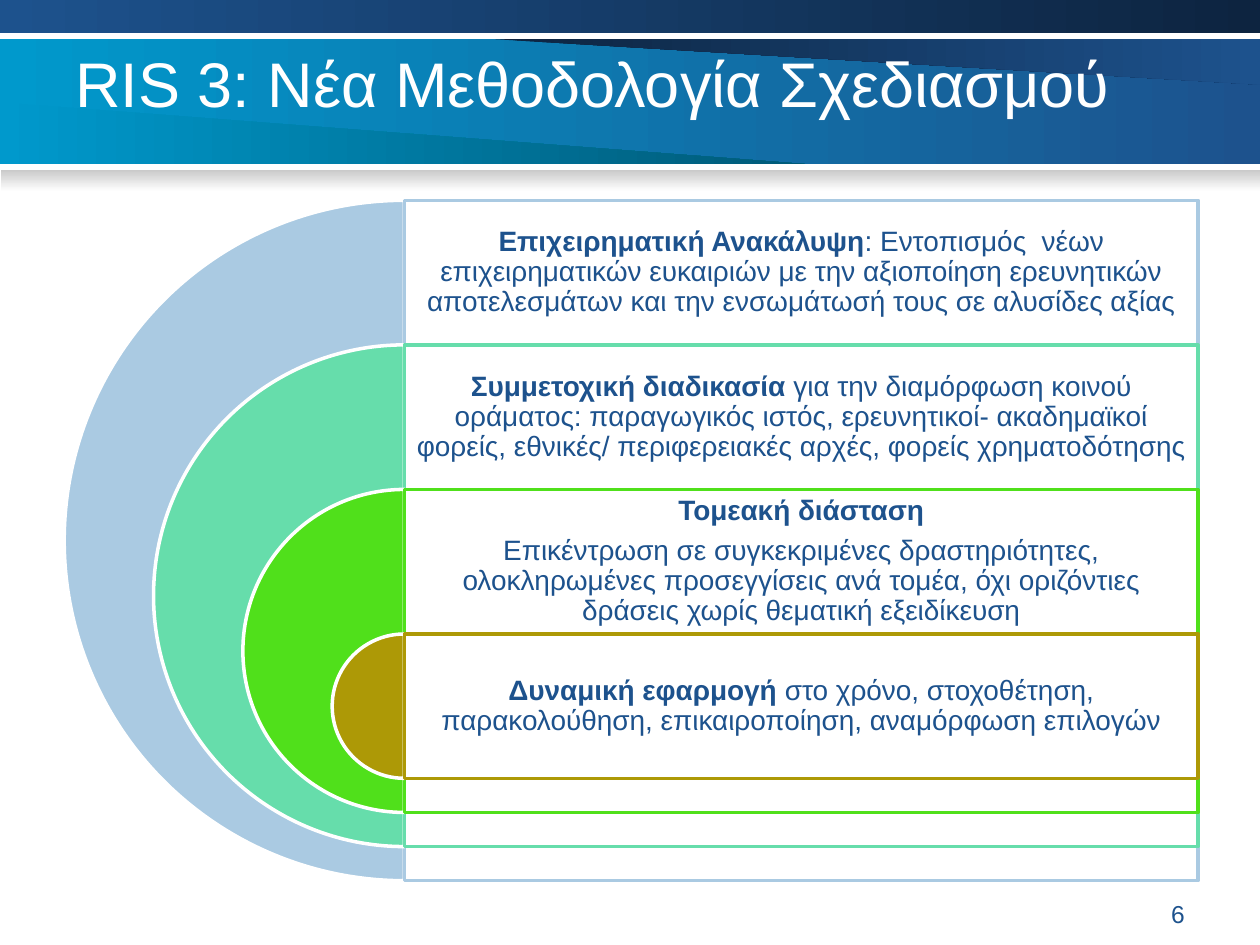
from dataclasses import dataclass

from lxml import etree
from pptx import Presentation
from pptx.dml import color
from pptx.enum import shapes, text
from pptx.oxml import ns
from pptx.util import Pt


@dataclass(frozen=True)
class Theme:
    """Colours, font and type sizes of the slide."""
    font: str = "Arial"
    title: float = 36
    body: float = 16
    number: float = 14
    white: str = "FFFFFF"
    blue: str = "1D528D"
    navy: str = "0D2440"
    cyan: str = "0099CC"
    teal: str = "005A78"
    grey: str = "CACACA"
    rings: tuple = ("AACAE2", "66DDAB", "50E01B", "AD9906")


T = Theme()
CENTER, RIGHT = text.PP_ALIGN.CENTER, text.PP_ALIGN.RIGHT
LAYERS = [
    [[("Επιχειρηματική Ανακάλυψη", True),
      (": Εντοπισμός  νέων επιχειρηματικών ευκαιριών με την αξιοποίηση ερευνητικών "
       "αποτελεσμάτων και την ενσωμάτωσή τους σε αλυσίδες αξίας", False)]],
    [[("Συμμετοχική διαδικασία ", True),
      ("για την διαμόρφωση κοινού οράματος: παραγωγικός ιστός, ερευνητικοί- ακαδημαϊκοί "
       "φορείς, εθνικές/ περιφερειακές αρχές, φορείς χρηματοδότησης", False)]],
    [[("Τομεακή διάσταση", True)],
     [("Επικέντρωση σε συγκεκριμένες δραστηριότητες, ολοκληρωμένες προσεγγίσεις ανά "
       "τομέα, όχι οριζόντιες δράσεις χωρίς θεματική εξειδίκευση", False)]],
    [[("Δυναμική εφαρμογή ", True),
      ("στο χρόνο, στοχοθέτηση, παρακολούθηση, επικαιροποίηση, αναμόρφωση επιλογών",
       False)]],
]


def rgb(value):
    """Turn a hex string into a colour."""
    return color.RGBColor.from_string(value)


def add_text(s, box, paragraphs, size, ink=T.blue, align=None, inset=None,
             anchor=text.MSO_ANCHOR.TOP, line=None, after=None):
    """Add a wrapped text box; each paragraph is a list of (text, bold) runs."""
    tf = s.shapes.add_textbox(*map(Pt, box)).text_frame
    tf.word_wrap = True
    tf.vertical_anchor = anchor
    if inset is not None:
        tf.margin_left = tf.margin_right = tf.margin_top = tf.margin_bottom = Pt(inset)
    for i, runs in enumerate(paragraphs):
        p = tf.add_paragraph() if i else tf.paragraphs[0]
        p.alignment, p.line_spacing = align, line
        p.space_after = None if after is None else Pt(after)
        for content, bold in runs:
            r = p.add_run()
            r.text = content
            r.font.name, r.font.size, r.font.bold = T.font, Pt(size), bold
            r.font.color.rgb = rgb(ink)


def paint_gradient(sp, start, end, angle=0):
    """Fill an unlined shape with a two-colour gradient at a clockwise angle."""
    sp.shadow.inherit = False
    sp.line.fill.background()
    sp.fill.gradient()
    sp.fill.gradient_angle = (360 - angle) % 360
    for stop, value in zip(sp.fill.gradient_stops, (start, end)):
        stop.color.rgb = rgb(value)


def add_solid(s, kind, box, fill, line, alpha=None):
    """Add a preset shape with a solid fill and a 2 pt line."""
    sp = s.shapes.add_shape(kind, *map(Pt, box))
    sp.shadow.inherit = False
    sp.fill.solid()
    sp.fill.fore_color.rgb = rgb(fill)
    sp.line.color.rgb, sp.line.width = rgb(line), Pt(2)
    if alpha is not None:
        clr = sp._element.spPr.find(ns.qn("a:solidFill"))[0]
        etree.SubElement(clr, ns.qn("a:alpha")).set("val", str(alpha * 1000))
    return sp


def add_band(s, box, start, end, angle=0):
    """Add a gradient rectangle."""
    sp = s.shapes.add_shape(shapes.MSO_SHAPE.RECTANGLE, *map(Pt, box))
    paint_gradient(sp, start, end, angle)


def add_wedge(s, points, start, end, angle=0):
    """Add a gradient polygon through the given points."""
    fb = s.shapes.build_freeform(*map(Pt, points[0]), scale=1.0)
    fb.add_line_segments([(Pt(x), Pt(y)) for x, y in points[1:]], close=True)
    paint_gradient(fb.convert_to_shape(), start, end, angle)


def add_header(s, box, title):
    """Draw the banner with its wedges, strip, shade and title."""
    x, y, w, h = box
    top, bottom = y + 22.4, y + 94
    add_band(s, (x, top, w, bottom - top), T.cyan, T.blue)
    add_wedge(s, [(x + w, top), (x + 283, top), (x + w, top + 26)], T.navy, T.blue)
    add_wedge(s, [(x, bottom), (x + 463, bottom), (x, bottom - 35.5)], T.cyan, T.teal)
    add_band(s, (x, y, w, 18.7), T.blue, T.navy)
    add_band(s, (x + 0.7, y + h - 12.2, w - 0.7, 12.2), T.grey, T.white, 90)
    add_text(s, (x + 36, y + 21.6, w - 72, 90), [[(title, False)]], T.title, T.white)


def add_rings(s, box, layers):
    """Draw nested half discs, each joined to a framed text panel."""
    x, y, w, h = box
    axis = x + h / 2
    row, shrink = 82.6, 102.1
    for i, (paragraphs, tint) in enumerate(zip(layers, T.rings)):
        top, size = y + i * row, h - i * shrink
        pie = add_solid(s, shapes.MSO_SHAPE.PIE, (axis - size / 2, top, size, size),
                        tint, T.white)
        pie.adjustments[0], pie.adjustments[1] = 54, 162
        panel_w = x + w - axis
        add_solid(s, shapes.MSO_SHAPE.RECTANGLE, (axis, top, panel_w, size),
                  T.white, tint, alpha=90)
        add_text(s, (axis, top, panel_w, row), paragraphs, T.body, align=CENTER,
                 inset=4.8, anchor=text.MSO_ANCHOR.MIDDLE, line=0.9, after=5.6)


def main():
    """Build the slide and save it."""
    prs = Presentation()
    prs.slide_width, prs.slide_height = Pt(720), Pt(540)
    s = prs.slides.add_slide(prs.slide_layouts[6])
    add_header(s, (0, 0, 720, 109.4), "RIS 3: Νέα Μεθοδολογία Σχεδιασμού")
    add_rings(s, (36.7, 114.5, 648, 388.8), LAYERS)
    add_text(s, (516, 510, 168, 19.4), [[("6", False)]], T.number, align=RIGHT)
    prs.save("out.pptx")


if __name__ == "__main__":
    main()
